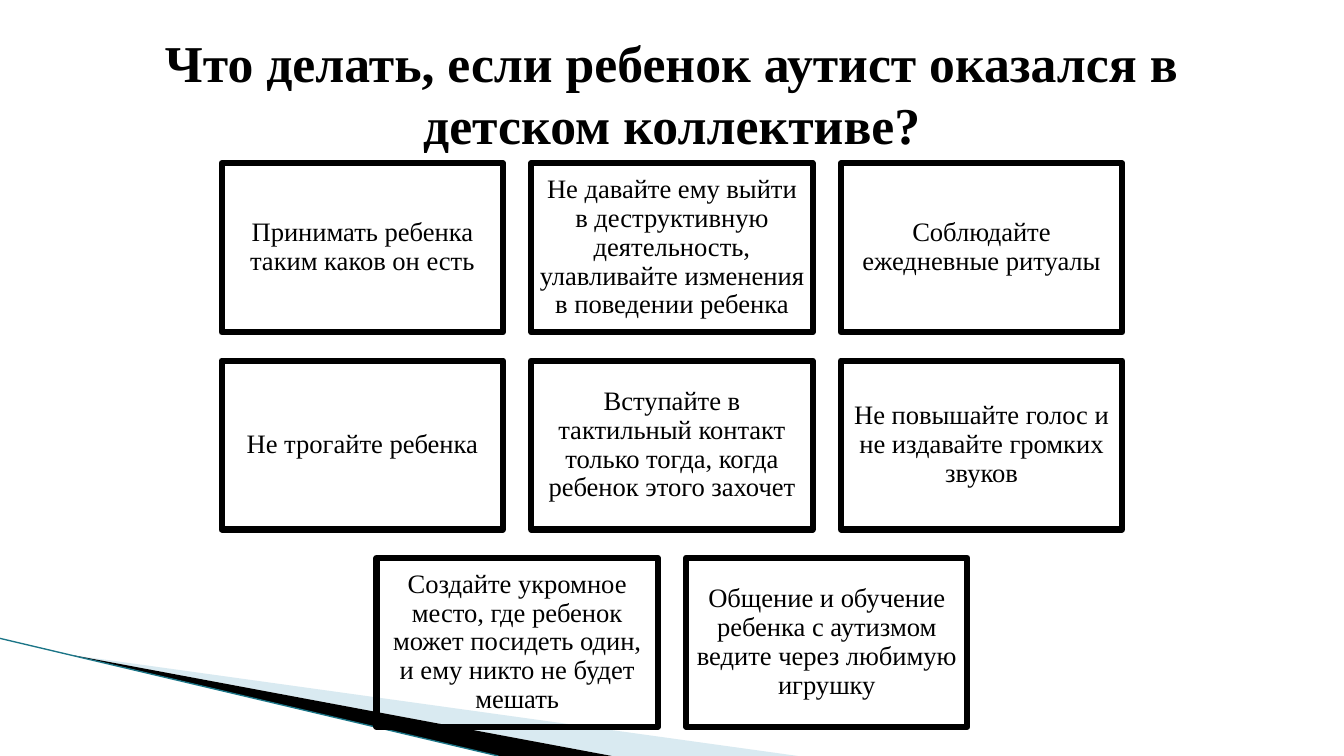
from lxml import etree
from pptx import Presentation
from pptx import util as u
from pptx.dml.color import RGBColor
from pptx.enum import shapes, text
from pptx.oxml import ns

Pt = u.Pt
FONT = "Times New Roman"
COLORS = {"ink": "000000", "wedge": "A0CBDC", "edge": "1B7587"}
TITLE = "Что делать, если ребенок аутист оказался в детском коллективе?"
TIPS = [
    ["Принимать ребенка таким каков он есть",
     "Не давайте ему выйти в деструктивную деятельность, улавливайте изменения в поведении ребенка",
     "Соблюдайте ежедневные ритуалы"],
    ["Не трогайте ребенка",
     "Вступайте в тактильный контакт только тогда, когда ребенок этого захочет",
     "Не повышайте голос и не издавайте громких звуков"],
    ["Создайте укромное место, где ребенок может посидеть один, и ему никто не будет мешать",
     "Общение и обучение ребенка с аутизмом ведите через любимую игрушку"],
]


def rgb(name):
    return RGBColor.from_string(COLORS[name])


def write(shape, content, inset, spacing, **font):
    """Put one centred paragraph in a shape."""
    tf = shape.text_frame
    frame = dict(word_wrap=True, vertical_anchor=text.MSO_ANCHOR.MIDDLE,
                 margin_left=Pt(inset), margin_right=Pt(inset))
    for key, value in frame.items():
        setattr(tf, key, value)
    p = tf.paragraphs[0]
    p.alignment = text.PP_ALIGN.CENTER
    p.line_spacing = spacing
    r = p.add_run()
    r.text = content
    for key, value in dict(font, name=FONT).items():
        setattr(r.font, key, value)
    r.font.color.rgb = rgb("ink")


def add_wedge(s, points, color, opacity=100):
    """Draw a filled corner blade, opacity in percent."""
    builder = s.shapes.build_freeform(*points[0], scale=Pt(1))
    builder.add_line_segments(points[1:], close=True)
    sp = builder.convert_to_shape()
    sp.shadow.inherit = False
    sp.line.fill.background()
    sp.fill.solid()
    sp.fill.fore_color.rgb = rgb(color)
    if opacity < 100:
        clr = sp.fill._xPr.find(".//" + ns.qn("a:srgbClr"))
        etree.SubElement(clr, ns.qn("a:alpha"), val=str(opacity * 1000))


def add_corner(s, left, top, width, height):
    """Fan two blades and an edge line out of the lower left corner."""
    right, bottom = left + width, top + height
    tip_x, tip_y = left + 52, top + 12
    add_wedge(s, [(tip_x, tip_y), (right, bottom), (right - 133, bottom)], "wedge", 40)
    add_wedge(s, [(tip_x, tip_y), (right - 133, bottom), (right - 214, bottom)], "ink")
    edge = s.shapes.add_connector(shapes.MSO_CONNECTOR.STRAIGHT, Pt(left), Pt(top),
                                  Pt(right - 214), Pt(bottom))
    edge.line.color.rgb = rgb("edge")
    edge.line.width = Pt(0.95)
    etree.SubElement(edge._element.spPr, ns.qn("a:effectLst"))


def add_tips(s, left, top, width, height, gap=20.2):
    """Lay out the tips in equal boxes, each row centred."""
    columns = max(len(row) for row in TIPS)
    box_w = (width - gap * (columns - 1)) / columns
    box_h = (height - gap * (len(TIPS) - 1)) / len(TIPS)
    for i, row in enumerate(TIPS):
        row_w = len(row) * (box_w + gap) - gap
        row_left = left + (width - row_w) / 2
        for j, tip in enumerate(row):
            sp = s.shapes.add_shape(
                shapes.MSO_SHAPE.RECTANGLE, Pt(row_left + j * (box_w + gap)),
                Pt(top + i * (box_h + gap)), Pt(box_w), Pt(box_h))
            sp.shadow.inherit = False
            sp.fill.background()
            sp.line.color.rgb = rgb("ink")
            sp.line.width = Pt(4.33)
            write(sp, tip, 5.76, 0.9, size=Pt(19))


def add_title(s, left, top, width, height):
    sp = s.shapes.add_textbox(Pt(left), Pt(top), Pt(width), Pt(height))
    write(sp, TITLE, 7.2, 1.0, size=Pt(36.9), bold=True)


def main():
    prs = Presentation()
    prs.slide_width, prs.slide_height = Pt(960), Pt(540)
    s = prs.slides.add_slide(prs.slide_layouts[6])
    add_corner(s, 0, 456, 570, 84)
    add_tips(s, 158.4, 116.6, 643.2, 402.6)
    add_title(s, 48, 21.6, 864, 90)
    prs.save("out.pptx")


if __name__ == "__main__":
    main()
